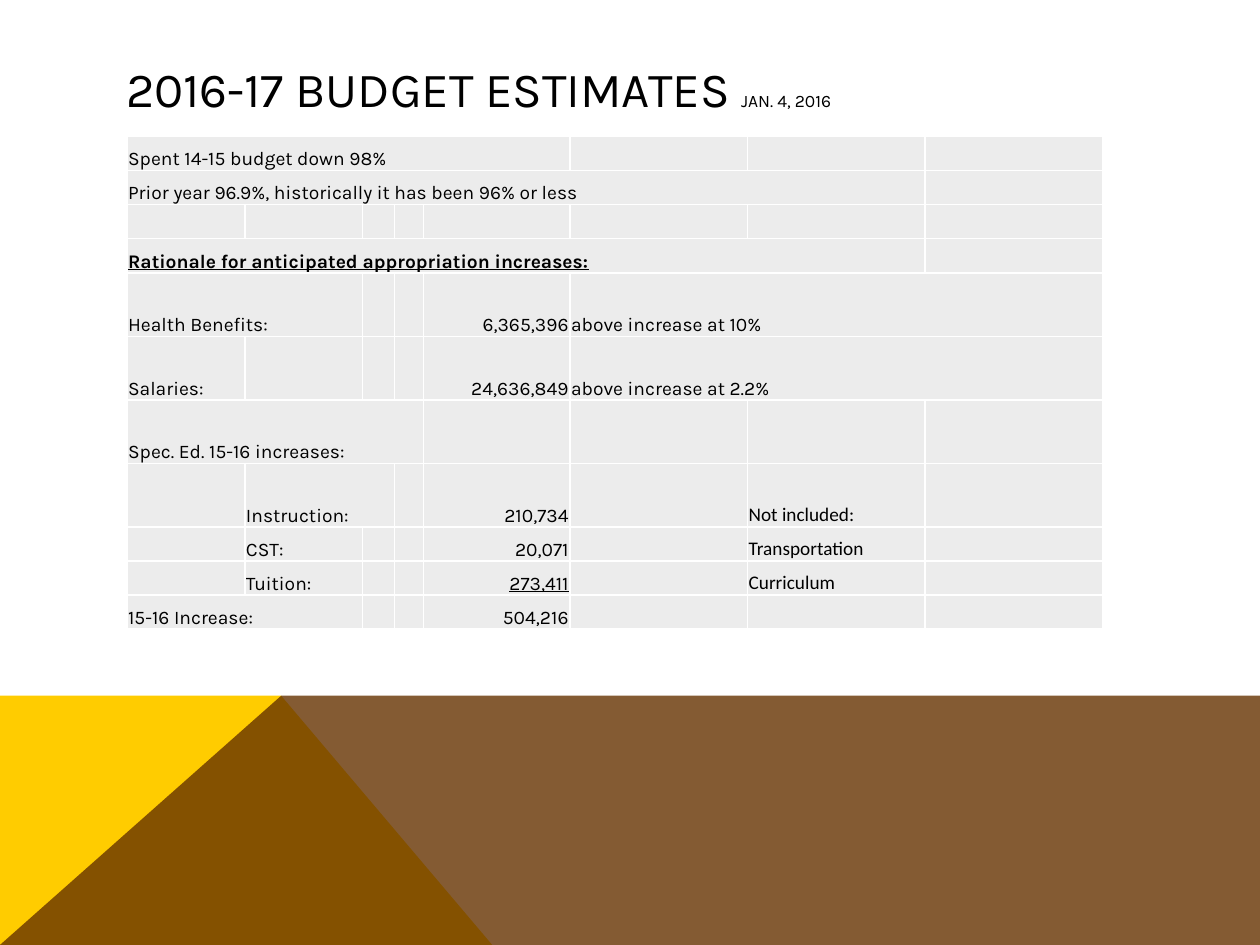
from lxml import etree
from pptx import Presentation
from pptx.dml.color import RGBColor
from pptx.enum.text import MSO_ANCHOR, MSO_AUTO_SIZE, PP_ALIGN
from pptx.oxml.ns import qn
from pptx.util import Pt

LEFT, RIGHT = PP_ALIGN.LEFT, PP_ALIGN.RIGHT
MIDDLE, BOTTOM = MSO_ANCHOR.MIDDLE, MSO_ANCHOR.BOTTOM
NO_AUTOFIT = MSO_AUTO_SIZE.NONE

THEME = {
    "text": "000000", "cell": "ECECEC", "border": "FFFFFF",
    "yellow": "FFCC00", "brown": "663300",
    "font": "Karla", "note_font": "Calibri",
    "title_size": 28, "date_size": 10, "table_size": 11,
}


def add_text(para, text, size=THEME["table_size"], font=THEME["font"],
             align=LEFT, bold=False, underline=False):
    para.alignment = align
    span = para.add_run()
    span.text = text
    span.font.size = Pt(size)
    span.font.name = font
    span.font.bold = bold
    span.font.underline = underline
    span.font.color.rgb = RGBColor.from_string(THEME["text"])


def add_borders(cell, color, width):
    properties = cell._tc.get_or_add_tcPr()
    for position, side in enumerate(("a:lnL", "a:lnR", "a:lnT", "a:lnB")):
        line = etree.Element(qn(side), w=str(Pt(width)))
        fill = etree.SubElement(line, qn("a:solidFill"))
        etree.SubElement(fill, qn("a:srgbClr"), val=color)
        properties.insert(position, line)


deck = Presentation()
deck.slide_width, deck.slide_height = Pt(720), Pt(540)
page = deck.slides.add_slide(deck.slide_layouts[5])

# Coloured base: a yellow wedge under a translucent brown band
TOP, PEAK = 397.6, 160.7
bands = [
    ("yellow", 100, [(0, 540), (0, TOP), (PEAK, TOP), (281.3, 540)]),
    ("brown", 80, [(0, 540), (PEAK, TOP), (720, TOP), (720, 540)]),
]
for color, opacity, corners in bands:
    points = [(Pt(x), Pt(y)) for x, y in corners]
    builder = page.shapes.build_freeform(*points[0])
    builder.add_line_segments(points[1:], close=True)
    band = builder.convert_to_shape()
    band.shadow.inherit = False
    band.line.fill.background()
    band.fill.solid()
    band.fill.fore_color.rgb = RGBColor.from_string(THEME[color])
    if opacity < 100:
        shade = band._element.spPr.find(qn("a:solidFill"))[0]
        etree.SubElement(shade, qn("a:alpha"), val=str(opacity * 1000))

# Title with its date
title = page.shapes.title
title.left, title.top, title.width, title.height = Pt(64.8), Pt(28.8), Pt(592), Pt(43.2)
frame = title.text_frame
frame.auto_size = NO_AUTOFIT
frame.word_wrap = True
frame.vertical_anchor = MIDDLE
add_text(frame.paragraphs[0], "2016-17 BUDGET ESTIMATES ", size=THEME["title_size"])
add_text(frame.paragraphs[0], "JAN. 4, 2016", size=THEME["date_size"])

# Budget table
LOW, TALL = 19.5, 36.3
widths = [67.4, 67.4, 18.1, 16.6, 83.7, 101.5, 101.5, 101.5]
heights = [LOW] * 4 + [TALL] * 4 + [LOW] * 3
number = {"align": RIGHT}
note = {"font": THEME["note_font"]}
# Each entry: row, column, columns spanned, text, format
entries = [
    (0, 0, 5, "Spent 14-15 budget down 98%", {}),
    (1, 0, 7, "Prior year 96.9%, historically it has been 96% or less", {}),
    (3, 0, 7, "Rationale for anticipated appropriation increases:",
     {"bold": True, "underline": True}),
    (4, 0, 2, "Health Benefits:", {}),
    (4, 4, 1, "6,365,396", number),
    (4, 5, 3, "above increase at 10%", {}),
    (5, 0, 1, "Salaries:", {}),
    (5, 4, 1, "24,636,849", number),
    (5, 5, 3, "above increase at 2.2%", {}),
    (6, 0, 4, "Spec. Ed. 15-16 increases:", {}),
    (7, 1, 2, "Instruction:", {}),
    (7, 4, 1, "210,734", number),
    (7, 6, 1, "Not included:", note),
    (8, 1, 1, "CST:", {}),
    (8, 4, 1, "20,071", number),
    (8, 6, 1, "Transportation", note),
    (9, 1, 1, "Tuition:", {}),
    (9, 4, 1, "273,411", {"align": RIGHT, "underline": True}),
    (9, 6, 1, "Curriculum", note),
    (10, 0, 2, "15-16 Increase:", {}),
    (10, 4, 1, "504,216", number),
]
table = page.shapes.add_table(len(heights), len(widths), Pt(72.5), Pt(78),
                              Pt(sum(widths)), Pt(sum(heights))).table
for column, width in zip(table.columns, widths):
    column.width = Pt(width)
for row, height in zip(table.rows, heights):
    row.height = Pt(height)

for row, column, span_count, text, style in entries:
    cell = table.cell(row, column)
    if span_count > 1:
        cell.merge(table.cell(row, column + span_count - 1))
    add_text(cell.text_frame.paragraphs[0], text, **style)

for cell in table.iter_cells():
    cell.fill.solid()
    cell.fill.fore_color.rgb = RGBColor.from_string(THEME["cell"])
    cell.vertical_anchor = BOTTOM
    cell.margin_left = cell.margin_right = cell.margin_top = Pt(0.7)
    cell.margin_bottom = 0
    add_borders(cell, THEME["border"], 1)
    if not cell.text_frame.text:
        # A small end mark keeps empty cells from stretching their row
        etree.SubElement(cell.text_frame.paragraphs[0]._p, qn("a:endParaRPr"),
                         sz=str(THEME["table_size"] * 100))

deck.save("out.pptx")
